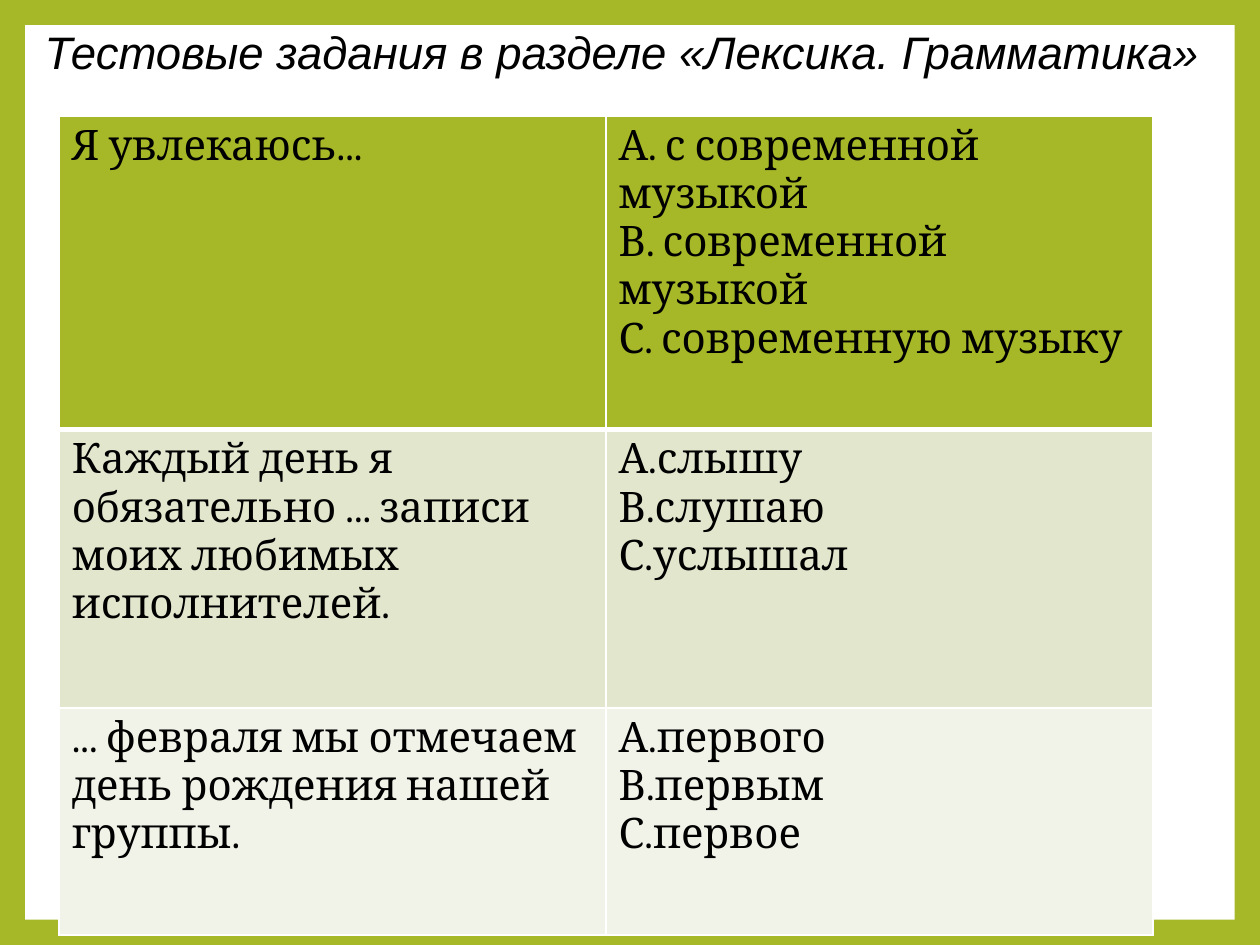
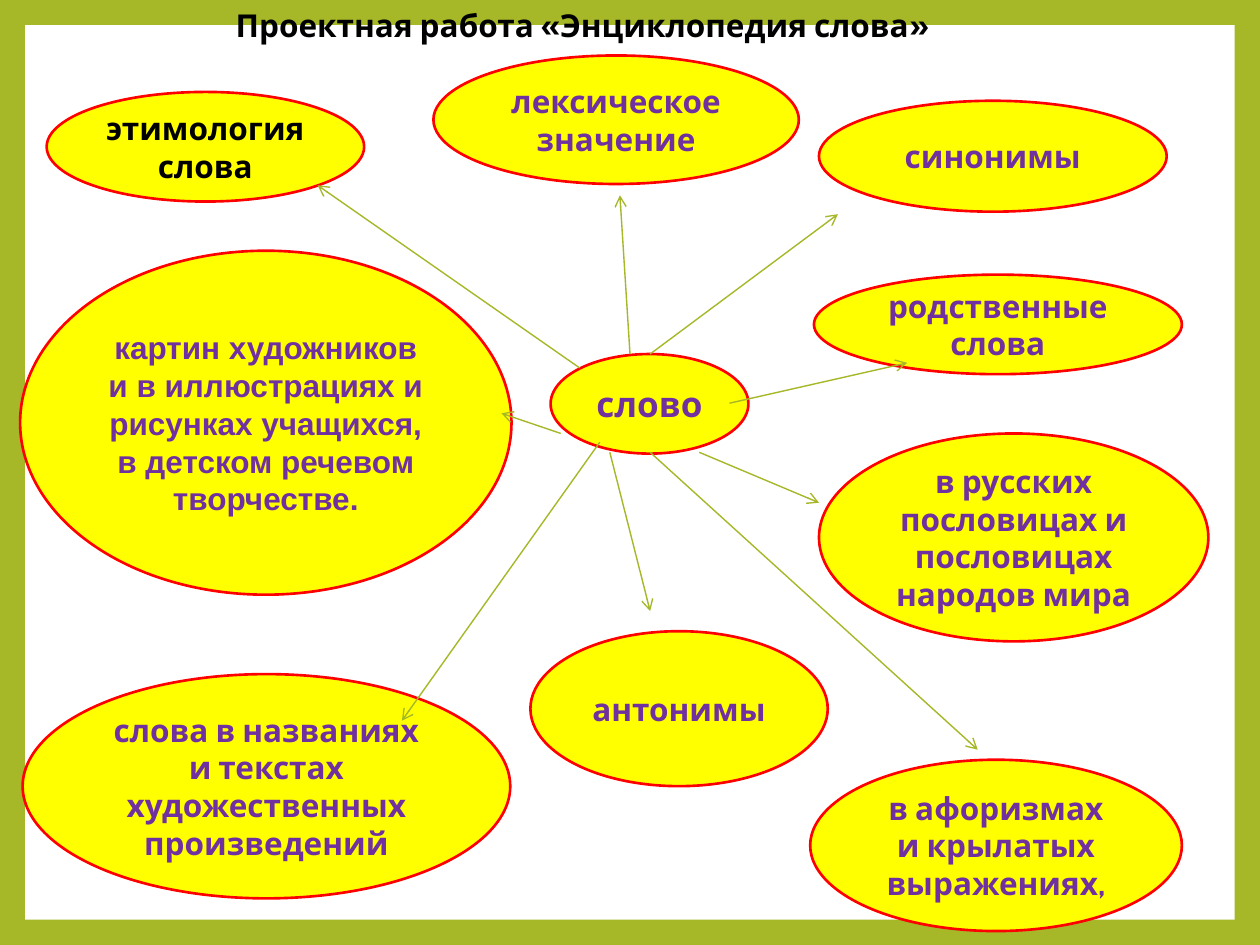
from lxml.etree import SubElement
from pptx import Presentation
from pptx.dml.color import RGBColor
from pptx.enum.shapes import MSO_CONNECTOR, MSO_SHAPE
from pptx.enum.text import MSO_ANCHOR, MSO_AUTO_SIZE, PP_ALIGN
from pptx.oxml.ns import qn
from pptx.util import Inches, Pt

# Shared look
GREEN, WHITE, BLACK = "A6B727", "FFFFFF", "000000"
YELLOW, RED, PURPLE = "FFFF00", "FF0000", "7030A0"
ROW_FILLS = [GREEN, "E1E6CD", "F1F3E8"]
SANS, HEAD, SERIF = "Arial", "Cabin", "Cambria"

# Grid of 100 columns by 75 rows
WIDTH, HEIGHT = Inches(10), Inches(7.5)
COL, ROW = WIDTH / 100, HEIGHT / 75
MARGIN = 2

QUESTIONS = [
    (24.9, ["Я увлекаюсь..."],
     ["А. с современной музыкой", "В. современной музыкой",
      "С. современную музыку"]),
    (22.1, ["Каждый день я обязательно ... записи моих любимых исполнителей."],
     ["А.слышу", "В.слушаю", "С.услышал"]),
    (18, ["... февраля мы отмечаем день рождения нашей группы."],
     ["А.первого", "В.первым", "С.первое"]),
]

# Topic: text, (left, top, width, height), changes to the usual font
TOPICS = [
    ("антонимы", (42.1, 50.1, 23.6, 12.3), {}),
    ("синонимы", (65, 8, 27.6, 8.8), {}),
    ("слово", (43.7, 28.1, 15.7, 7.9), {"size": 20}),
    ("в русских пословицах и пословицах народов мира",
     (65, 34.4, 30.9, 16.5), {}),
    ("лексическое значение", (34.4, 4.4, 29, 10.2), {}),
    ("этимология слова", (3.7, 7.3, 25.2, 8.7), {"color": BLACK}),
    ("картин художников и в иллюстрациях и рисунках учащихся, "
     "в детском речевом творчестве.", (1.6, 19.9, 39, 27.3), {"font": SANS}),
    ("родственные слова", (64.6, 21.8, 29.2, 7.9), {}),
    ("в афоризмах и крылатых выражениях,", (64.3, 60.3, 29.5, 13.6), {}),
    ("слова в названиях и текстах художественных произведений",
     (1.8, 53.5, 38.7, 17.8), {}),
]

# Arrows from the central word: start and end
ARROWS = [
    ((51.6, 28.1), (66.5, 17)),
    ((57.9, 32), (72, 28.8)),
    ((55.5, 35.9), (65, 39.9)),
    ((51.6, 35.9), (77.6, 59.5)),
    ((48.4, 35.9), (51.6, 48.5)),
    ((47.6, 35.1), (31.9, 57.2)),
    ((44.5, 34.4), (39.8, 32.8)),
    ((46, 29.2), (25.2, 14.7)),
    ((50, 28.1), (49.2, 15.5)),
]


def rgb(color):
    return RGBColor.from_string(color)


def place(left, top, width, height):
    return (round(left * COL), round(top * ROW),
            round(width * COL), round(height * ROW))


def paint(part, color):
    part.fill.solid()
    part.fill.fore_color.rgb = rgb(color)


def write(tf, lines, font, size, color, bold=False, italic=False, align=None):
    for i, line in enumerate(lines):
        p = tf.paragraphs[0] if i == 0 else tf.add_paragraph()
        p.alignment = align
        r = p.add_run()
        r.text = line
        f = r.font
        f.name, f.size, f.bold, f.italic = font, Pt(size), bold, italic
        f.color.rgb = rgb(color)


def add_panel(prs, s):
    """White panel on a green ground, moved to the master."""
    paint(prs.slide_master.background, GREEN)
    sp = s.shapes.add_shape(MSO_SHAPE.RECTANGLE, *place(
        MARGIN, MARGIN, 100 - 2 * MARGIN, 75 - 2 * MARGIN))
    sp.shadow.inherit = False
    paint(sp, WHITE)
    sp.line.fill.background()
    prs.slide_master.shapes._spTree.insert(2, sp._element)


def add_title(s, text, box, **style):
    sp = s.shapes.title
    sp.left, sp.top, sp.width, sp.height = place(*box)
    tf = sp.text_frame
    tf.word_wrap = True
    tf.auto_size = MSO_AUTO_SIZE.NONE
    tf.vertical_anchor = MSO_ANCHOR.TOP
    write(tf, [text], color=BLACK, align=PP_ALIGN.CENTER, **style)


def add_border(cell, side, width):
    ln = SubElement(cell._tc.get_or_add_tcPr(), qn("a:" + side),
                    w=str(Pt(width)))
    fill = SubElement(ln, qn("a:solidFill"))
    SubElement(fill, qn("a:srgbClr"), val=WHITE)


def add_questions(s, left, top, width):
    height = sum(q[0] for q in QUESTIONS)
    table = s.shapes.add_table(len(QUESTIONS), 2,
                               *place(left, top, width, height)).table
    for i, (row_height, *texts) in enumerate(QUESTIONS):
        table.rows[i].height = round(row_height * ROW)
        for j, lines in enumerate(texts):
            cell = table.cell(i, j)
            for side in ("lnL", "lnR", "lnT", "lnB"):
                thick = (i, side) in ((0, "lnB"), (1, "lnT"))
                add_border(cell, side, 3 if thick else 1)
            paint(cell, ROW_FILLS[i])
            write(cell.text_frame, lines, SERIF, 24, BLACK)


def add_topic(s, text, box, font=HEAD, size=18, color=PURPLE):
    sp = s.shapes.add_shape(MSO_SHAPE.OVAL, *place(*box))
    sp.shadow.inherit = False
    paint(sp, YELLOW)
    sp.line.color.rgb = rgb(RED)
    sp.line.width = Pt(1.5)
    tf = sp.text_frame
    tf.word_wrap = True
    tf.vertical_anchor = MSO_ANCHOR.MIDDLE
    write(tf, [text], font, size, color, bold=True, align=PP_ALIGN.CENTER)


def add_arrow(s, start, end):
    cx = s.shapes.add_connector(MSO_CONNECTOR.STRAIGHT, *place(*start, *end))
    cx.line.color.rgb = rgb(GREEN)
    cx.line.width = Pt(0.79)
    SubElement(cx.line._get_or_add_ln(), qn("a:tailEnd"), type="arrow")
    SubElement(cx._element.spPr, qn("a:effectLst"))


def main():
    prs = Presentation()
    prs.slide_width, prs.slide_height = WIDTH, HEIGHT
    title_only = prs.slide_layouts[5]

    # Test questions
    s = prs.slides.add_slide(title_only)
    add_panel(prs, s)
    add_title(s, "Тестовые задания в разделе «Лексика. Грамматика»",
              (2.2, 1.4, 94.4, 9.7), font=SANS, size=26, italic=True)
    add_questions(s, 4.7, 9.2, 86.8)

    # Word map
    s = prs.slides.add_slide(title_only)
    add_title(s, "Проектная работа «Энциклопедия слова»",
              (3.3, 0, 85.8, 7.1), font=HEAD, size=18, bold=True)
    for text, box, style in TOPICS:
        add_topic(s, text, box, **style)
    for start, end in ARROWS:
        add_arrow(s, start, end)

    prs.save("out.pptx")


if __name__ == "__main__":
    main()
